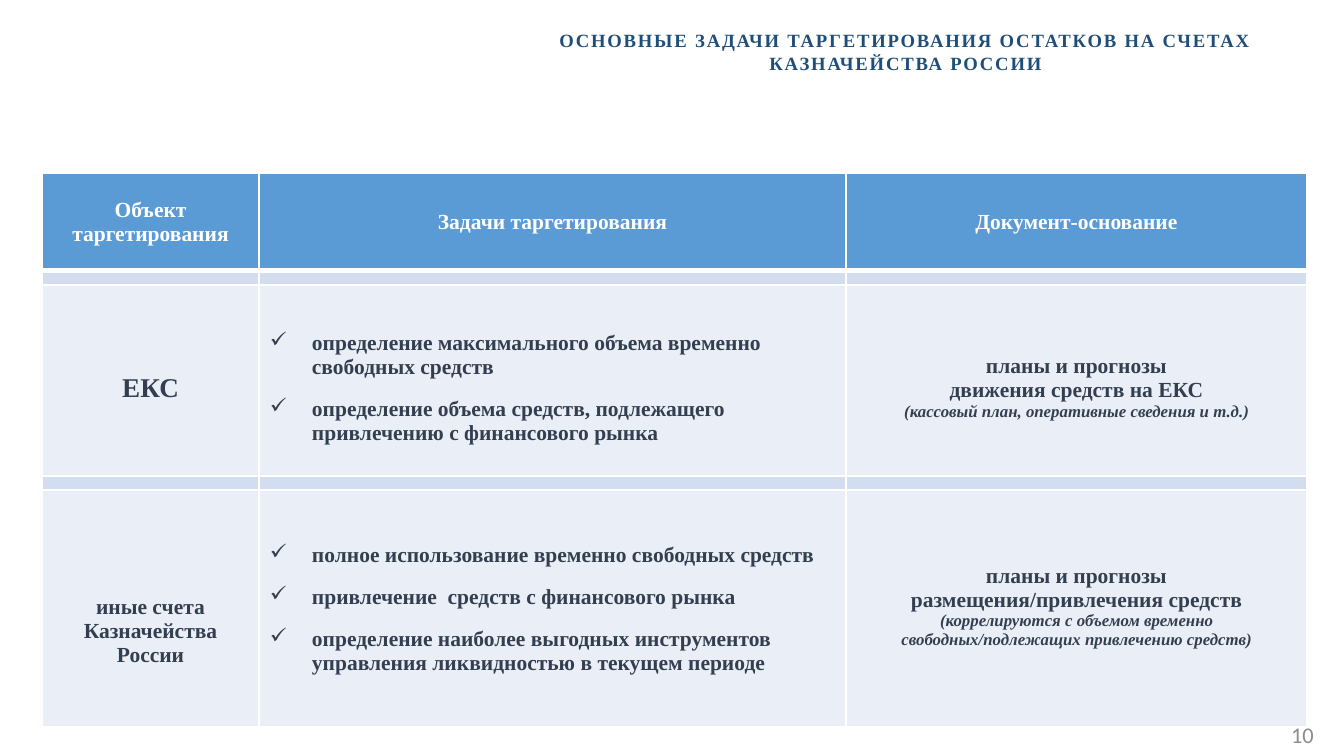
from lxml.etree import SubElement
from pptx import Presentation
from pptx.dml.color import RGBColor
from pptx.enum.text import MSO_ANCHOR, PP_ALIGN
from pptx.oxml.ns import qn
from pptx.util import Emu, Pt

SCALE = 914400 / 134.4
WHITE = RGBColor(0xFF, 0xFF, 0xFF)
NAVY = RGBColor(0x1F, 0x4E, 0x79)
SLATE = RGBColor(0x33, 0x3F, 0x50)
GRAY = RGBColor(0x8C, 0x8C, 0x8C)
HEADER_BLUE = RGBColor(0x5B, 0x9B, 0xD5)
BAND_BLUE = RGBColor(0xD2, 0xDE, 0xEF)
PALE_BLUE = RGBColor(0xEA, 0xEF, 0xF7)
SERIF = "Times New Roman"
BODY, NOTE, LARGE = 11.5, 9, 14.5
COLUMNS = [217, 587, 461]
ROWS = [98, 14, 191, 14, 237]
HEADINGS = ["Объект таргетирования", "Задачи таргетирования", "Документ-основание"]


def px(length):
    return Emu(round(length * SCALE))


def set_margins(target, side, top, bottom):
    target.margin_left = target.margin_right = px(side)
    target.margin_top, target.margin_bottom = px(top), px(bottom)


def format_text(para, size, color, font=SERIF, bold=True, italic=False):
    for span in para.runs:
        span.font.name = font
        span.font.size = Pt(size)
        span.font.bold = bold
        span.font.italic = italic
        span.font.color.rgb = color


def add_box(page, left, top, width, height, text, align):
    box = page.shapes.add_textbox(px(left), px(top), px(width), px(height))
    box.text_frame.word_wrap = True
    box.text_frame.text = text
    para = box.text_frame.paragraphs[0]
    para.alignment = align
    return box.text_frame, para


def set_borders(cell, top=1, bottom=1):
    """Draw white borders, with widths in points."""
    properties = cell._tc.get_or_add_tcPr()
    widths = {"a:lnL": 1, "a:lnR": 1, "a:lnT": top, "a:lnB": bottom}
    for position, (tag, width) in enumerate(widths.items()):
        line = SubElement(properties, qn(tag), w=str(Pt(width)))
        fill = SubElement(line, qn("a:solidFill"))
        SubElement(fill, qn("a:srgbClr"), val=str(WHITE))
        properties.insert(position, line)


def fill_cell(cell, lines, color, shift=0):
    """Write (text, size) lines centred, moved down by shift px."""
    set_margins(cell, 11, 5 + max(0, 2 * shift), 5 + max(0, -2 * shift))
    cell.vertical_anchor = MSO_ANCHOR.MIDDLE
    cell.text_frame.text = "\n".join(text for text, size in lines)
    for para, (text, size) in zip(cell.text_frame.paragraphs, lines):
        para.alignment = PP_ALIGN.CENTER
        format_text(para, size, color, italic=size == NOTE)


def fill_checklist(cell, items, shift):
    fill_cell(cell, [(item, BODY) for item in items], SLATE, shift)
    for position, para in enumerate(cell.text_frame.paragraphs):
        para.alignment = PP_ALIGN.LEFT
        if position:
            para.space_before = Pt(9.6)
        properties = para._p.get_or_add_pPr()
        properties.set("marL", str(px(42)))
        properties.set("indent", str(px(-42)))
        SubElement(properties, qn("a:buChar"), char="✓")


def shrink_empty_cell(cell):
    set_margins(cell, 0, 0, 0)
    SubElement(cell.text_frame.paragraphs[0]._p, qn("a:endParaRPr"), sz="400")


def add_task_table(page):
    frame = page.shapes.add_table(len(ROWS), len(COLUMNS), px(42), px(173),
                                  px(sum(COLUMNS)), px(sum(ROWS)))
    table = frame.table
    for column, width in zip(table.columns, COLUMNS):
        column.width = px(width)
    fills = [HEADER_BLUE, BAND_BLUE, PALE_BLUE, BAND_BLUE, PALE_BLUE]
    for index, (row, height, color) in enumerate(zip(table.rows, ROWS, fills)):
        row.height = px(height)
        for cell in row.cells:
            cell.fill.solid()
            cell.fill.fore_color.rgb = color
            set_borders(cell, top=3 if index == 1 else 1, bottom=3 if index == 0 else 1)
            if color == BAND_BLUE:
                shrink_empty_cell(cell)
    for column, heading in enumerate(HEADINGS):
        fill_cell(table.cell(0, column), [(heading, BODY)], WHITE)
    return table


def fill_task_row(table, row, subject, tasks, basis, shifts):
    fill_cell(table.cell(row, 0), [subject], SLATE, shifts[0])
    fill_checklist(table.cell(row, 1), tasks, shifts[1])
    fill_cell(table.cell(row, 2), basis, SLATE, shifts[2])


def main():
    deck = Presentation()
    deck.slide_width, deck.slide_height = px(1344), px(756)
    page = deck.slides.add_slide(deck.slide_layouts[6])

    frame, para = add_box(
        page, 487, 24, 837, 55,
        "ОСНОВНЫЕ ЗАДАЧИ ТАРГЕТИРОВАНИЯ ОСТАТКОВ НА СЧЕТАХ КАЗНАЧЕЙСТВА РОССИИ",
        PP_ALIGN.CENTER)
    set_margins(frame, 9, 5, 5)
    format_text(para, 10, NAVY)
    para.runs[0].font._element.set("spc", "100")

    table = add_task_table(page)
    fill_task_row(
        table, 2, ("ЕКС", LARGE),
        ["определение максимального объема временно свободных средств",
         "определение объема средств, подлежащего привлечению с финансового рынка"],
        [("планы и прогнозы", BODY), ("движения средств на ЕКС", BODY),
         ("(кассовый план, оперативные сведения и т.д.)", NOTE)],
        shifts=[8, 8, 7])
    fill_task_row(
        table, 4, ("иные счета Казначейства России", BODY),
        ["полное использование временно свободных средств",
         "привлечение  средств с финансового рынка",
         "определение наиболее выгодных инструментов управления ликвидностью "
         "в текущем периоде"],
        [("планы и прогнозы", BODY), ("размещения/привлечения средств", BODY),
         ("(коррелируются с объемом временно свободных/подлежащих "
          "привлечению средств)", NOTE)],
        shifts=[23, 1, -2])

    frame, para = add_box(page, 1275, 715, 52, 40, "10", PP_ALIGN.RIGHT)
    frame.vertical_anchor = MSO_ANCHOR.MIDDLE
    format_text(para, 12, GRAY, font="Calibri", bold=False)
    deck.save("out.pptx")


if __name__ == "__main__":
    main()
